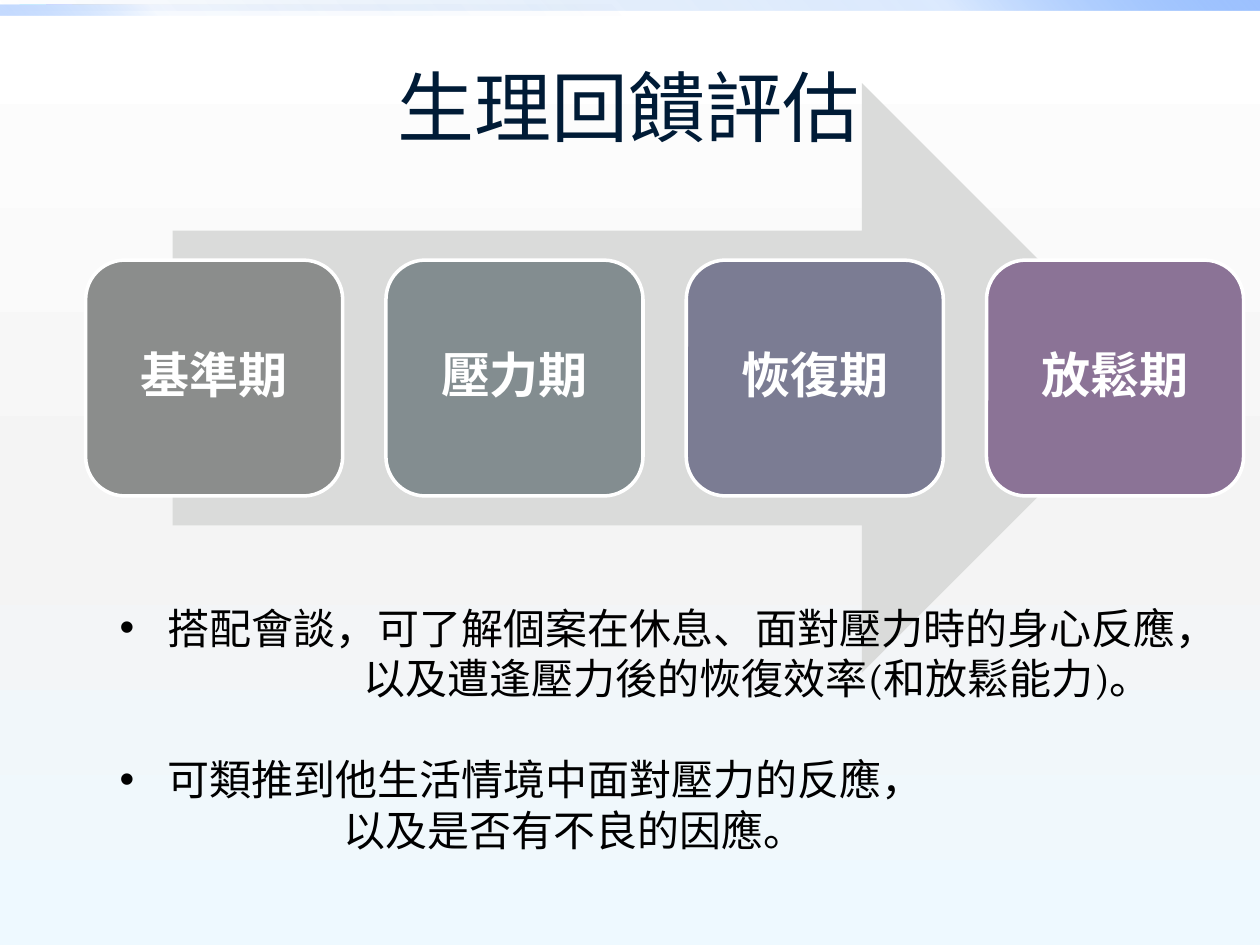
from lxml import etree
from pptx import Presentation
from pptx.dml.color import RGBColor
from pptx.enum.shapes import MSO_SHAPE
from pptx.enum.text import MSO_ANCHOR, PP_ALIGN
from pptx.oxml.ns import qn
from pptx.util import Inches, Pt

RECT, ROUND, ARROW = MSO_SHAPE.RECTANGLE, MSO_SHAPE.ROUNDED_RECTANGLE, MSO_SHAPE.RIGHT_ARROW
MIDDLE, CENTER = MSO_ANCHOR.MIDDLE, PP_ALIGN.CENTER
WIDTH, HEIGHT = 10, 7.5

BACKGROUND = [(0, "FFFFFF", 100), (55, "F4F4F4", 100), (100, "EEF9FF", 100)]
TOP_BAR = [(0, "0058B7", 0), (75, "4F95FF", 20), (100, "9EC2FF", 100)]
LEFT_BAR = [(0, "0058B7", 0), (75, "4F95FF", 5), (100, "9EC2FF", 60)]
PHASES = [("基準期", "8B8D8C"), ("壓力期", "838D90"), ("恢復期", "7B7C93"), ("放鬆期", "8B7396")]
# text, left indent in inches, bulleted, points before
NOTES = [
    ("搭配會談，可了解個案在休息、面對壓力時的身心反應，", 0.38, True, 0),
    ("以及遭逢壓力後的恢復效率(和放鬆能力)。", 1.94, False, 0),
    ("可類推到他生活情境中面對壓力的反應，", 0.38, True, 29),
    ("以及是否有不良的因應。", 1.78, False, 0),
]


def color(value):
    return RGBColor.from_string(value)


def set_gradient(owner, fill, stops, angle):
    """Fill with any number of (position, colour, opacity) stops, angle clockwise."""
    fill.gradient()
    gradient = next(owner.iter(qn("a:gradFill")))
    stop_list = gradient.find(qn("a:gsLst"))
    for old in list(stop_list):
        stop_list.remove(old)
    for position, value, opacity in stops:
        stop = etree.SubElement(stop_list, qn("a:gs"), pos=str(position * 1000))
        tint = etree.SubElement(stop, qn("a:srgbClr"), val=value)
        if opacity < 100:
            etree.SubElement(tint, qn("a:alpha"), val=str(opacity * 1000))
    gradient.find(qn("a:lin")).set("ang", str(angle * 60000))


def add_plain_shape(page, kind, box, fill=None):
    shape = page.shapes.add_shape(kind, *map(Inches, box))
    shape.shadow.inherit = False
    shape.line.fill.background()
    if fill:
        shape.fill.solid()
        shape.fill.fore_color.rgb = color(fill)
    return shape


def add_span(para, text, value, **formats):
    span = para.add_run()
    span.text = text
    span.font.color.rgb = color(value)
    for name, setting in formats.items():
        setattr(span.font, name, setting)


def add_backdrop(page):
    set_gradient(page.background._cSld, page.background.fill, BACKGROUND, 90)
    bars = [((0, 0, WIDTH, 0.08), TOP_BAR, 315), ((0, 0.04, WIDTH / 2, 0.08), LEFT_BAR, 135)]
    for box, stops, angle in bars:
        bar = add_plain_shape(page, RECT, box)
        set_gradient(bar._element, bar.fill, stops, angle)


def add_title(page, box):
    frame = page.shapes.add_textbox(*map(Inches, box)).text_frame
    frame.word_wrap = True
    frame.vertical_anchor = MIDDLE
    para = frame.paragraphs[0]
    para.alignment = CENTER
    add_span(para, "生理回饋評估", "001B36", name="Courier New", size=Pt(44))


def add_process(page, box):
    """Arrow at 85% width behind a row of cards at 40% height."""
    left, top, width, height = box
    add_plain_shape(page, ARROW, (left + 0.075 * width, top, 0.85 * width, height), "DADBDA")
    card_width, card_height = 2.04, 0.4 * height
    step = (width - card_width) / (len(PHASES) - 1)
    for index, (label, fill) in enumerate(PHASES):
        card = add_plain_shape(page, ROUND, (left + index * step, top + 0.3 * height,
                                             card_width, card_height), fill)
        card.line.color.rgb = color("FFFFFF")
        card.line.width = Pt(2)
        frame = card.text_frame
        frame.vertical_anchor = MIDDLE
        para = frame.paragraphs[0]
        para.alignment = CENTER
        para.line_spacing = 0.9
        para.space_after = Pt(10)
        add_span(para, label, "FFFFFF", name="Cambria", size=Pt(28), bold=True)


def add_notes(page, box):
    frame = page.shapes.add_textbox(*map(Inches, box)).text_frame
    frame.word_wrap = True
    for index, (text, indent, bulleted, before) in enumerate(NOTES):
        para = frame.add_paragraph() if index else frame.paragraphs[0]
        para.space_before = Pt(before)
        layout = para._p.get_or_add_pPr()
        layout.set("marL", str(Inches(indent)))
        if bulleted:
            layout.set("indent", str(-Inches(indent)))
            etree.SubElement(layout, qn("a:buFont"), typeface="Arial")
            etree.SubElement(layout, qn("a:buChar"), char="•")
        add_span(para, text, "000000", name="Cambria", size=Pt(24))


def main():
    deck = Presentation()
    deck.slide_width, deck.slide_height = Inches(WIDTH), Inches(HEIGHT)
    page = deck.slides.add_slide(deck.slide_layouts[6])
    add_backdrop(page)
    add_title(page, (1.05, 0.38, 7.88, 0.92))
    add_process(page, (0.68, 0.66, 9.19, 4.68))
    add_notes(page, (0.85, 4.73, 8.78, 2.46))
    deck.save("out.pptx")


if __name__ == "__main__":
    main()
